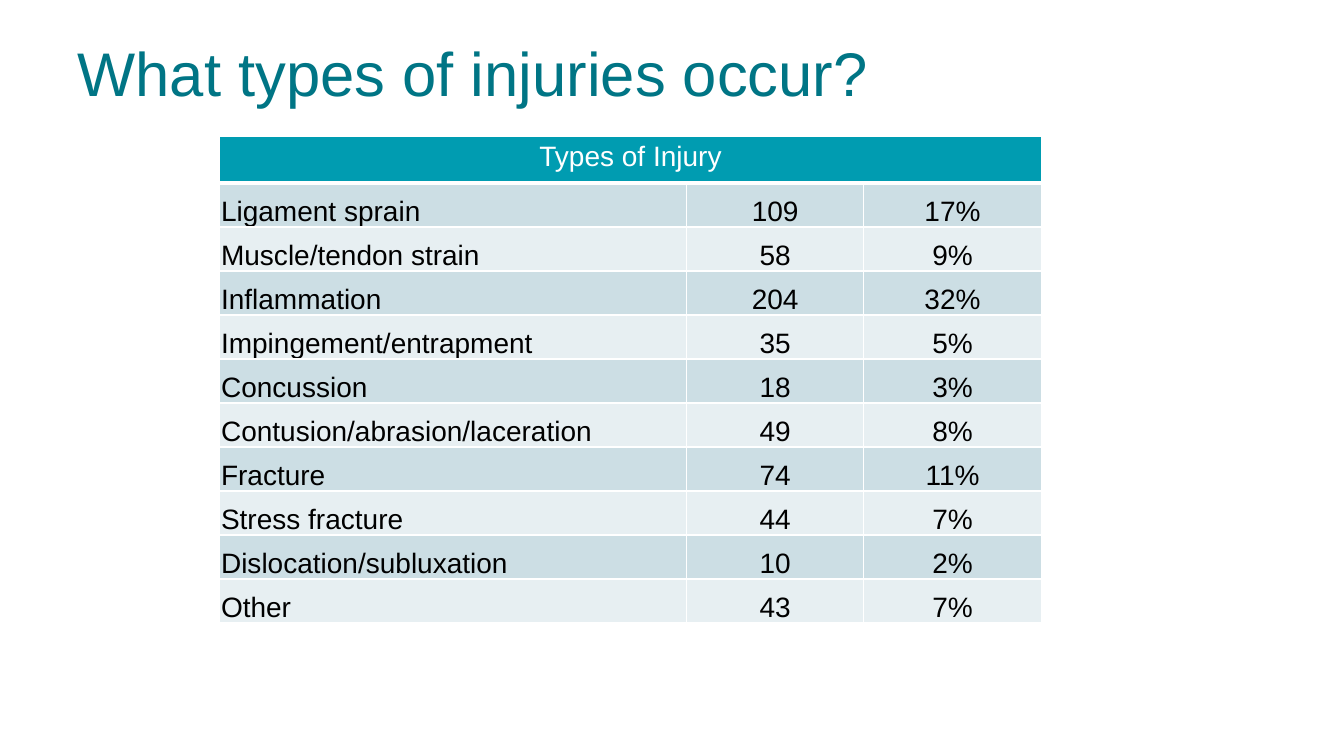
from lxml import etree
from pptx import Presentation
from pptx.dml.color import RGBColor
from pptx.enum.text import MSO_ANCHOR, PP_ALIGN
from pptx.oxml.ns import qn
from pptx.util import Cm, Pt

LEFT, CENTER = PP_ALIGN.LEFT, PP_ALIGN.CENTER
TOP, BOTTOM = MSO_ANCHOR.TOP, MSO_ANCHOR.BOTTOM

FONT = "Arial"
TITLE_TEAL = "007585"
HEADER_TEAL = "009CB1"
BANDS = ("CCDEE4", "E7EFF2")
WHITE, BLACK = "FFFFFF", "000000"

TITLE_BOX = (1.7, 0.76, 30.48, 3.18)
TABLE_BOX = (5.54, 3.43, 20.7, 12.28)
HEADER_HEIGHT = 1.18
COUNT_WIDTH = 4.47

INJURIES = [
    ("Ligament sprain", "109", "17%"),
    ("Muscle/tendon strain", "58", "9%"),
    ("Inflammation", "204", "32%"),
    ("Impingement/entrapment", "35", "5%"),
    ("Concussion", "18", "3%"),
    ("Contusion/abrasion/laceration", "49", "8%"),
    ("Fracture", "74", "11%"),
    ("Stress fracture", "44", "7%"),
    ("Dislocation/subluxation", "10", "2%"),
    ("Other", "43", "7%"),
]


def rgb(hex_color):
    return RGBColor.from_string(hex_color)


def write(frame, text, size, color, align):
    frame.text = text
    paragraph = frame.paragraphs[0]
    paragraph.alignment = align
    font = paragraph.font
    font.name, font.size, font.bold = FONT, Pt(size), False
    font.color.rgb = rgb(color)


def add_borders(cell, top=1, bottom=1):
    """Draw white cell borders; widths are in points."""
    properties = cell._tc.get_or_add_tcPr()
    for side, width in (("L", 1), ("R", 1), ("T", top), ("B", bottom)):
        line = etree.SubElement(properties, qn(f"a:ln{side}"), w=str(Pt(width)))
        fill = etree.SubElement(line, qn("a:solidFill"))
        etree.SubElement(fill, qn("a:srgbClr"), val=WHITE)


def paint(cell, color):
    cell.fill.solid()
    cell.fill.fore_color.rgb = rgb(color)


def place_title(slide, box):
    title = slide.shapes.title
    title.left, title.top, title.width, title.height = map(Cm, box)
    frame = title.text_frame
    frame.word_wrap = True
    frame.vertical_anchor = TOP
    write(frame, "What types of injuries occur?", 44, TITLE_TEAL, LEFT)


def fill_header(table):
    for cell in table.rows[0].cells:
        add_borders(cell, bottom=3)
        paint(cell, HEADER_TEAL)
    heading = table.cell(0, 0)
    heading.merge(table.cell(0, 2))
    write(heading.text_frame, "Types of Injury", 20, WHITE, CENTER)


def fill_injury_row(table, number, injury):
    for column, text in enumerate(injury):
        cell = table.cell(number, column)
        cell.vertical_anchor = BOTTOM
        cell.margin_left = cell.margin_right = cell.margin_top = Cm(0.03)
        cell.margin_bottom = 0
        add_borders(cell, top=3 if number == 1 else 1)
        paint(cell, BANDS[(number - 1) % 2])
        write(cell.text_frame, text, 20, BLACK, CENTER if column else LEFT)


def add_injury_table(slide, box):
    width, height = box[2:]
    table = slide.shapes.add_table(len(INJURIES) + 1, 3, *map(Cm, box)).table
    for column, column_width in zip(
        table.columns, (width - 2 * COUNT_WIDTH, COUNT_WIDTH, COUNT_WIDTH)
    ):
        column.width = Cm(column_width)
    for row in table.rows:
        row.height = Cm((height - HEADER_HEIGHT) / len(INJURIES))
    table.rows[0].height = Cm(HEADER_HEIGHT)
    fill_header(table)
    for number, injury in enumerate(INJURIES, 1):
        fill_injury_row(table, number, injury)


def main():
    deck = Presentation()
    deck.slide_width, deck.slide_height = Cm(33.87), Cm(19.05)
    title_only = deck.slide_layouts[5]
    slide = deck.slides.add_slide(title_only)
    place_title(slide, TITLE_BOX)
    add_injury_table(slide, TABLE_BOX)
    deck.save("out.pptx")


if __name__ == "__main__":
    main()
